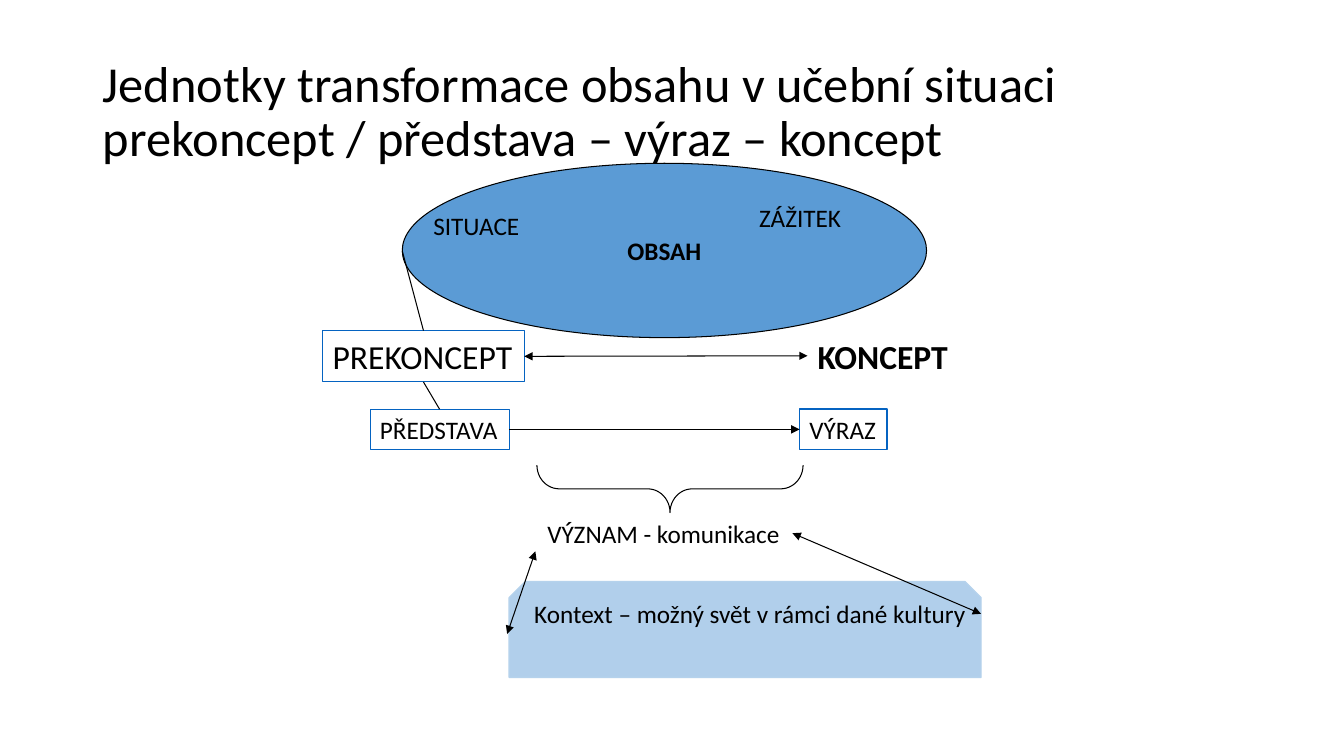
import pptx
import pptx.util
import pptx.dml.color
import pptx.enum.shapes
import pptx.enum.text
import pptx.oxml.ns
from lxml import etree

Inches = pptx.util.Inches
Pt = pptx.util.Pt
SHAPE = pptx.enum.shapes.MSO_SHAPE
ANCHOR = pptx.enum.text.MSO_ANCHOR
ALIGN = pptx.enum.text.PP_ALIGN
AUTO = pptx.enum.text.MSO_AUTO_SIZE
qn = pptx.oxml.ns.qn

COLORS = {"text": "000000", "line": "000000", "content": "5B9BD5",
          "frame": "0563C1", "context": "B5D2EC"}
FONT = "Calibri"
TOP, LEFT, BOTTOM, RIGHT = range(4)


def rgb(name):
    return pptx.dml.color.RGBColor.from_string(COLORS[name])


def set_line(sp, color, width):
    sp.line.color.rgb = rgb(color)
    sp.line.width = Pt(width)


def set_text(sp, text, size, bold=False, align=ALIGN.LEFT, anchor=ANCHOR.TOP,
             wrap=False, auto=AUTO.NONE):
    tf = sp.text_frame
    tf.word_wrap = wrap
    tf.auto_size = auto
    tf.vertical_anchor = anchor
    p = tf.paragraphs[0]
    p.text = text
    p.alignment = align
    p.font.name = FONT
    p.font.size = Pt(size)
    p.font.bold = bold
    p.font.color.rgb = rgb("text")
    return p


def add_title(s, box, text):
    sp = s.shapes.title
    sp.left, sp.top, sp.width, sp.height = map(Inches, box)
    p = set_text(sp, text, 36, anchor=ANCHOR.MIDDLE, wrap=True)
    p.line_spacing = 0.9


def add_shape(s, kind, box, line, width=0.75, fill=None, alpha=None):
    sp = s.shapes.add_shape(kind, *map(Inches, box))
    sp.shadow.inherit = False
    set_line(sp, line, width)
    if fill:
        sp.fill.solid()
        sp.fill.fore_color.rgb = rgb(fill)
    else:
        sp.fill.background()
    if alpha:
        clr = sp.fill._xPr.find(qn("a:solidFill"))[0]
        etree.SubElement(clr, qn("a:alpha")).set("val", str(alpha * 1000))
    return sp


def add_label(s, box, text, size=18, bold=False):
    sp = s.shapes.add_textbox(*map(Inches, box))
    set_text(sp, text, size, bold, auto=AUTO.SHAPE_TO_FIT_TEXT)


def add_framed(s, box, text, size=18, width=0.75):
    sp = add_shape(s, SHAPE.RECTANGLE, box, "frame", width)
    set_text(sp, text, size, auto=AUTO.SHAPE_TO_FIT_TEXT)
    return sp


def add_line(s, start, end, heads=()):
    points = [(0, 0) if len(e) == 2 and not isinstance(e[0], (int, float)) else e
              for e in (start, end)]
    cn = s.shapes.add_connector(pptx.enum.shapes.MSO_CONNECTOR.STRAIGHT,
                                *(Inches(v) for pt in points for v in pt))
    for e, connect in ((start, cn.begin_connect), (end, cn.end_connect)):
        if not isinstance(e[0], (int, float)):
            connect(*e)
    set_line(cn, "line", 0.75)
    ln = cn.line._get_or_add_ln()
    for head in heads:
        etree.SubElement(ln, qn("a:" + head)).set("type", "triangle")
    etree.SubElement(cn._element.spPr, qn("a:effectLst"))


def main():
    prs = pptx.Presentation()
    prs.slide_width, prs.slide_height = Inches(13.33), Inches(7.5)
    s = prs.slides.add_slide(prs.slide_layouts[5])

    add_shape(s, SHAPE.SNIP_2_SAME_RECTANGLE, (5.05, 5.77, 4.68, 0.95),
              "context", 1, "content", 47)
    add_title(s, (0.92, 0.4, 11.5, 1.45),
              "Jednotky transformace obsahu v učební situaci\v"
              "prekoncept / představa – výraz – koncept")
    content = add_shape(s, SHAPE.OVAL, (3.99, 1.62, 5.2, 1.73), "line", fill="content")
    set_text(content, "OBSAH", 18, True, ALIGN.CENTER, ANCHOR.MIDDLE)

    preconcept = add_framed(s, (3.2, 3.28, 2, 0.51), "PREKONCEPT", 24)
    idea = add_framed(s, (3.67, 4.06, 1.38, 0.4), "PŘEDSTAVA")
    expression = add_framed(s, (7.93, 4.06, 0.87, 0.4), "VÝRAZ", width=1.25)

    add_label(s, (8.01, 3.28, 1.51, 0.51), "KONCEPT", 24, True)
    add_label(s, (4.2, 2.04, 1.06, 0.4), "SITUACE")
    add_label(s, (7.43, 1.96, 1.02, 0.4), "ZÁŽITEK")
    add_label(s, (5.33, 5.09, 2.53, 0.4), "VÝZNAM - komunikace")
    add_label(s, (5.2, 5.89, 4.53, 0.4), "Kontext – možný svět v rámci dané kultury")

    brace = add_shape(s, SHAPE.RIGHT_BRACE, (6.41, 3.53, 0.47, 2.64), "line")
    brace.rotation = 90
    brace.adjustments[0] = 0.47

    both = ("headEnd", "tailEnd")
    add_line(s, (3.99, 2.49), (preconcept, TOP))
    add_line(s, (idea, TOP), (preconcept, BOTTOM))
    add_line(s, (idea, RIGHT), (expression, LEFT), ("tailEnd",))
    add_line(s, (preconcept, RIGHT), (8.01, 3.53), both)
    add_line(s, (5.31, 5.47), (5.03, 6.29), both)
    add_line(s, (7.86, 5.29), (9.73, 6.09), both)

    prs.save("out.pptx")


if __name__ == "__main__":
    main()
